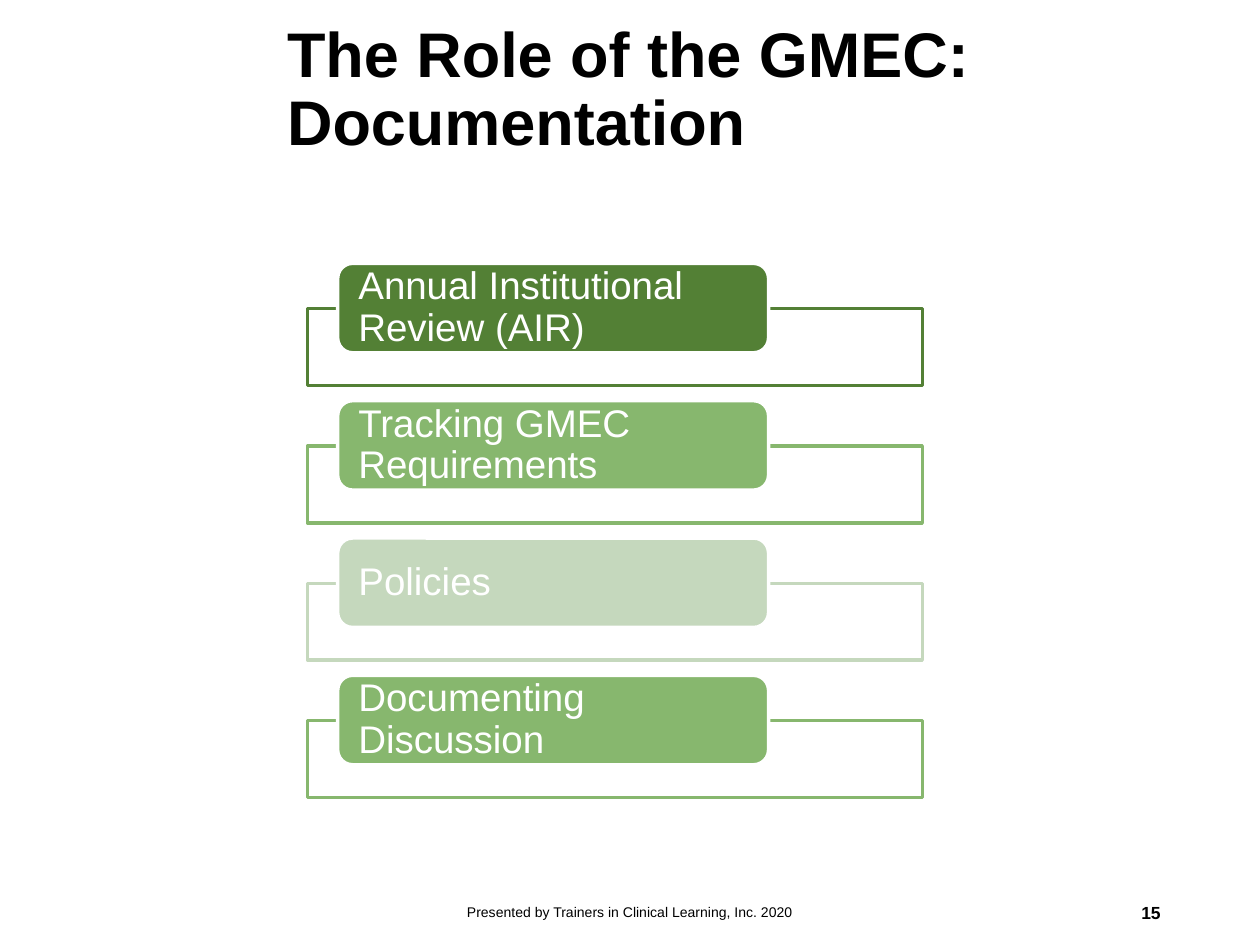
from dataclasses import dataclass

from lxml import etree
from pptx import Presentation
from pptx.dml.color import RGBColor
from pptx.enum.shapes import MSO_SHAPE
from pptx.enum.text import MSO_ANCHOR, PP_ALIGN
from pptx.oxml.ns import qn
from pptx.util import Inches, Pt

RECT = MSO_SHAPE.RECTANGLE
ROUNDED = MSO_SHAPE.ROUNDED_RECTANGLE
MIDDLE = MSO_ANCHOR.MIDDLE
LEFT, CENTER, RIGHT = PP_ALIGN.LEFT, PP_ALIGN.CENTER, PP_ALIGN.RIGHT


@dataclass(frozen=True)
class Theme:
    font: str = "Arial"
    black: str = "000000"
    white: str = "FFFFFF"
    dark: str = "538035"
    medium: str = "87B76E"
    pale: str = "C5D8BD"
    title: int = 36
    item: int = 22
    number: int = 10
    footer: int = 8
    line: int = 2


class Deck:
    def __init__(self, prs, theme):
        self.theme = theme
        self.slide = prs.slides.add_slide(prs.slide_layouts[6])

    def set_text(self, s, text, size, color, bold=False, align=LEFT,
                 insets=(0.1, 0.05, 0.1, 0.05), spacing=1.0):
        tf = s.text_frame
        tf.word_wrap = True
        tf.vertical_anchor = MIDDLE
        tf.margin_left, tf.margin_top, tf.margin_right, tf.margin_bottom = map(Inches, insets)
        tf.text = text
        p = tf.paragraphs[0]
        p.alignment = align
        p.line_spacing = spacing
        font = p.runs[0].font
        font.name = self.theme.font
        font.size = Pt(size)
        font.bold = bold
        font.color.rgb = RGBColor.from_string(color)

    def label(self, box, text, size, **style):
        s = self.slide.shapes.add_textbox(*map(Inches, box))
        self.set_text(s, text, size, self.theme.black, **style)

    def shape(self, kind, box, fill, line, opacity=100):
        s = self.slide.shapes.add_shape(kind, *map(Inches, box))
        s.shadow.inherit = False
        s.fill.solid()
        s.fill.fore_color.rgb = RGBColor.from_string(fill)
        s.line.color.rgb = RGBColor.from_string(line)
        s.line.width = Pt(self.theme.line)
        if opacity < 100:
            color = s.element.spPr.find(qn("a:solidFill"))[0]
            etree.SubElement(color, qn("a:alpha")).set("val", str(opacity * 1000))
        return s

    def item(self, top, text, color):
        t = self.theme
        self.shape(RECT, (2.44, top + 0.36, 4.88, 0.61), t.white, color, opacity=90)
        s = self.shape(ROUNDED, (2.68, top, 3.42, 0.71), color, t.white)
        self.set_text(s, text, t.item, t.white, insets=(0.13, 0, 0.13, 0), spacing=0.9)


def main():
    prs = Presentation()
    prs.slide_width, prs.slide_height = Inches(10), Inches(7.5)
    theme = Theme()
    deck = Deck(prs, theme)

    deck.label((2.18, 0.27, 7.14, 1.45), "The Role of the GMEC: Documentation",
               theme.title, bold=True, insets=(0.1, 0.1, 0.1, 0.65), spacing=0.9)

    items = [
        ("Annual Institutional Review (AIR)", theme.dark),
        ("Tracking GMEC Requirements", theme.medium),
        ("Policies", theme.pale),
        ("Documenting Discussion", theme.medium),
    ]
    first_top, pitch = 2.09, 1.09
    for i, (text, color) in enumerate(items):
        deck.item(first_top + i * pitch, text, color)

    deck.label((3.31, 7.04, 3.38, 0.4),
               "Presented by Trainers in Clinical Learning, Inc. 2020",
               theme.footer, align=CENTER)
    deck.label((7.06, 7.04, 2.25, 0.4), "15", theme.number, bold=True, align=RIGHT)

    prs.save("out.pptx")


if __name__ == "__main__":
    main()
